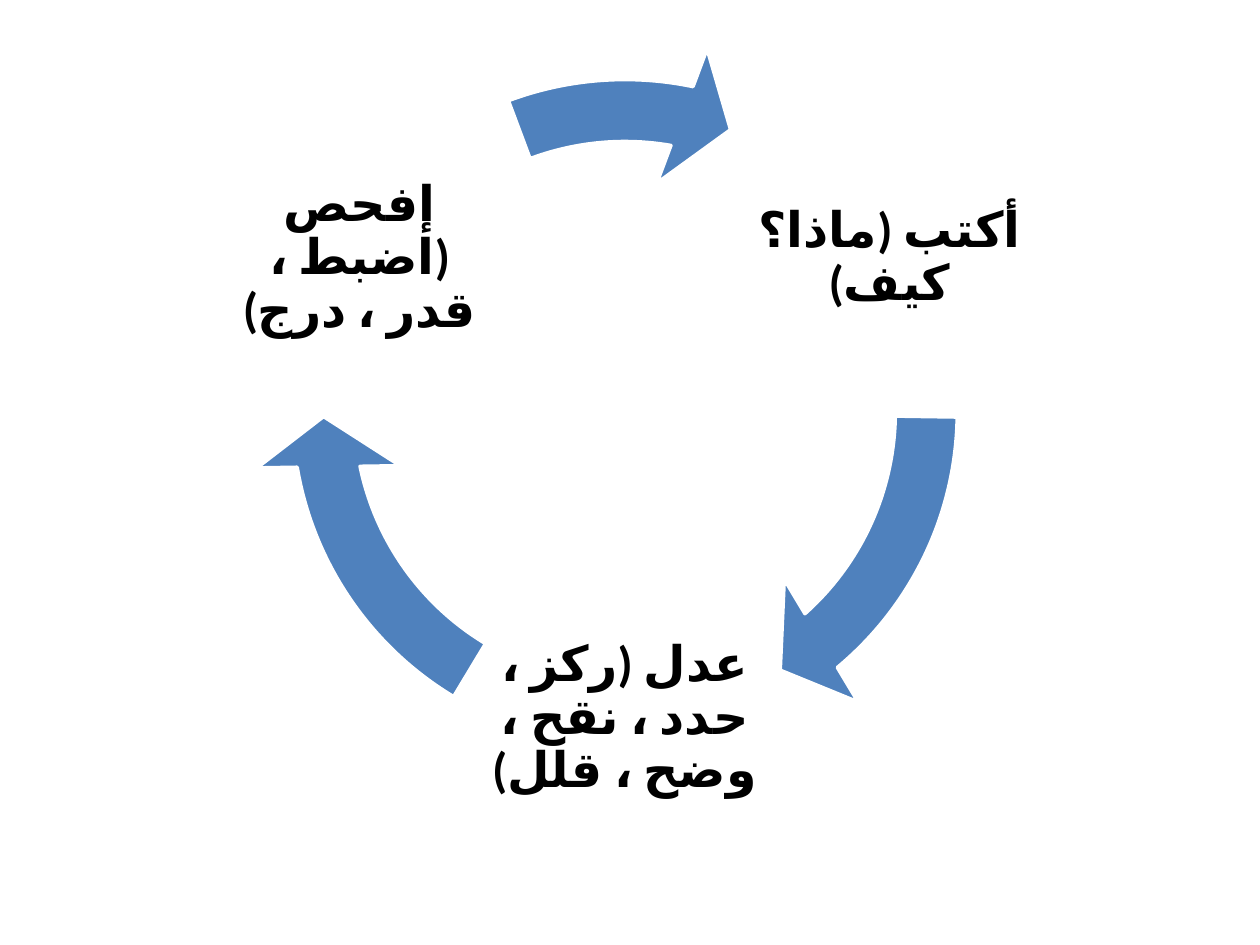
import dataclasses

import lxml.etree
import pptx
import pptx.dml.color
import pptx.enum.shapes
import pptx.enum.text
import pptx.oxml.ns
import pptx.slide
import pptx.util

EMU_PER_PX = 914400 / 126
BLACK = pptx.dml.color.RGBColor(0x00, 0x00, 0x00)
BLUE = pptx.dml.color.RGBColor(0x4F, 0x81, 0xBD)
WHITE = pptx.dml.color.RGBColor(0xFF, 0xFF, 0xFF)

TYPEFACE = "Calibri"
STAGE_SIZE = 315
CYCLE_LEFT, CYCLE_TOP, CYCLE_SIZE = 252, 39, 746
BAND_WIDTH, HEAD_SWEEP, HEAD_WIDTH = 0.083, 5.766, 0.096
INSET = 5

FRAME_FORMAT = {
    "word_wrap": True,
    "vertical_anchor": pptx.enum.text.MSO_ANCHOR.MIDDLE,
}
PARAGRAPH_FORMAT = {
    "alignment": pptx.enum.text.PP_ALIGN.CENTER,
    "line_spacing": 0.9,
}
FONT_FORMAT = {"name": TYPEFACE, "size": pptx.util.Pt(28), "bold": True}


@dataclasses.dataclass(frozen=True)
class Stage:
    wording: str
    left: int
    top: int
    arrow_end: float
    arrow_start: float


STAGES = (
    Stage("أكتب (ماذا؟ كيف)", 732, 101, 29.618, 0.531),
    Stage("عدل (ركز ، حدد ، نقح ، وضح ، قلل)", 467, 561, 101.704, 72.616),
    Stage("إفحص (اضبط ، قدر ، درج)", 202, 101, 168.548, 149.686),
)


def px(length: int) -> pptx.util.Emu:
    return pptx.util.Emu(round(length * EMU_PER_PX))


def apply_format(target: object, values: dict) -> None:
    for name, value in values.items():
        setattr(target, name, value)


def draw_wording(slide: pptx.slide.Slide, stage: Stage) -> None:
    label = slide.shapes.add_textbox(
        px(stage.left), px(stage.top), px(STAGE_SIZE), px(STAGE_SIZE)
    )
    frame = label.text_frame
    apply_format(frame, FRAME_FORMAT)
    apply_format(
        frame,
        {f"margin_{side}": px(INSET) for side in ("left", "top", "right", "bottom")},
    )
    paragraph = frame.paragraphs[0]
    apply_format(paragraph, PARAGRAPH_FORMAT)
    paragraph._p.get_or_add_pPr().set("rtl", "1")
    wording = paragraph.add_run()
    wording.text = stage.wording
    apply_format(wording.font, FONT_FORMAT)
    wording.font.color.rgb = BLACK
    properties = wording._r.get_or_add_rPr()
    properties.set("lang", "ar-SA")
    lxml.etree.SubElement(
        properties, pptx.oxml.ns.qn("a:cs"), {"typeface": TYPEFACE}
    )


def draw_arrow(slide: pptx.slide.Slide, stage: Stage) -> None:
    arrow = slide.shapes.add_shape(
        pptx.enum.shapes.MSO_SHAPE.CIRCULAR_ARROW,
        px(CYCLE_LEFT), px(CYCLE_TOP), px(CYCLE_SIZE), px(CYCLE_SIZE),
    )
    proportions = (
        BAND_WIDTH, HEAD_SWEEP, stage.arrow_end, stage.arrow_start, HEAD_WIDTH
    )
    for index, proportion in enumerate(proportions):
        arrow.adjustments[index] = proportion
    arrow.shadow.inherit = False
    arrow.fill.solid()
    arrow.fill.fore_color.rgb = BLUE
    arrow.line.color.rgb = WHITE
    arrow.line.width = pptx.util.Pt(2)


def main() -> None:
    presentation = pptx.Presentation()
    apply_format(presentation, {"slide_width": px(1260), "slide_height": px(945)})
    slide = presentation.slides.add_slide(presentation.slide_layouts[6])
    for stage in STAGES:
        draw_wording(slide, stage)
        draw_arrow(slide, stage)
    presentation.save("out.pptx")


if __name__ == "__main__":
    main()
